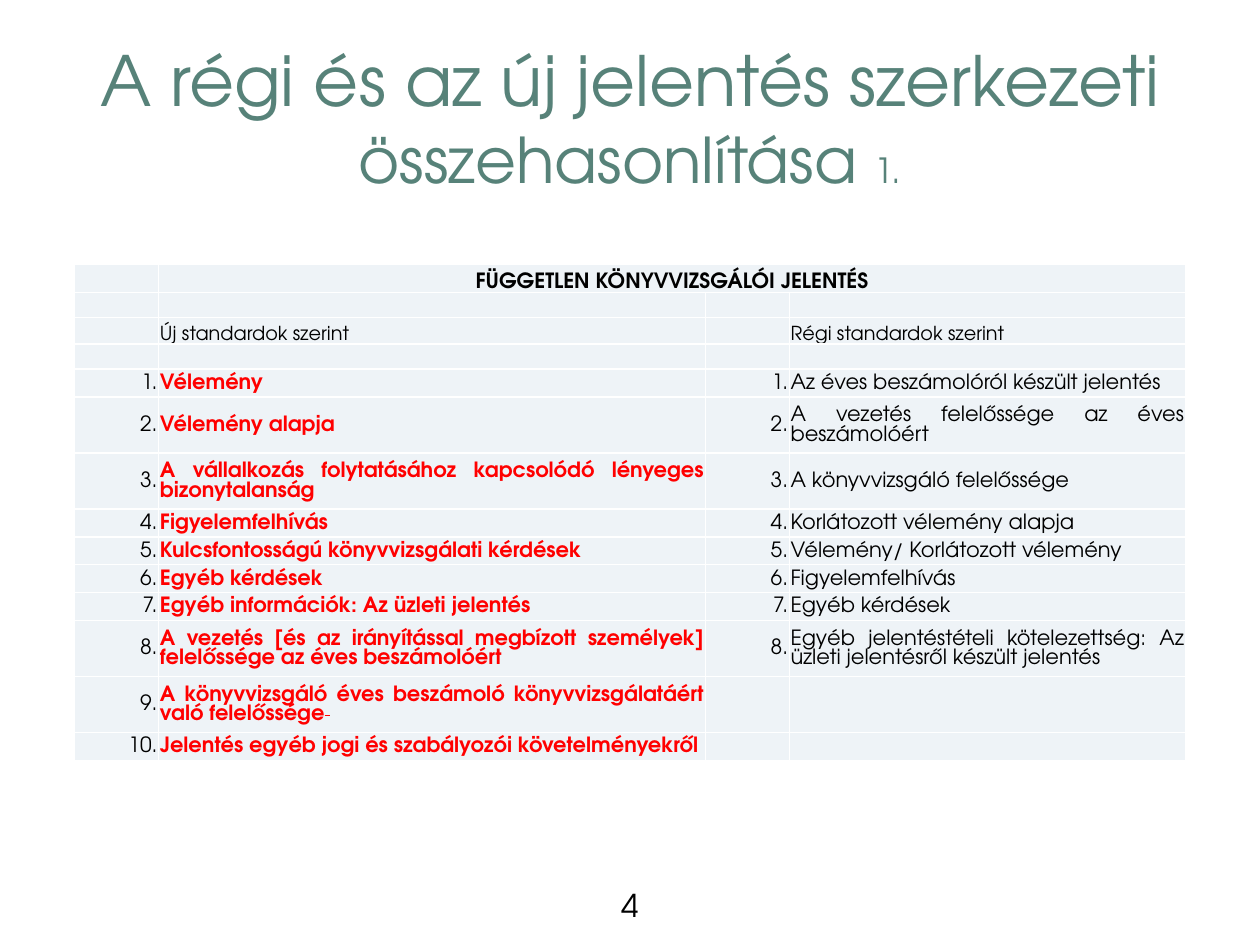
from lxml.etree import SubElement
from pptx import Presentation
from pptx.dml.color import RGBColor
from pptx.enum.text import MSO_ANCHOR, PP_ALIGN
from pptx.oxml.ns import qn
from pptx.util import Inches, Pt

FONT = "TeX Gyre Adventor"
GREEN, BLACK, RED, PALE, WHITE = "578279", "000000", "FF0000", "EEF3F7", "FFFFFF"
GRID_COLUMNS, GRID_ROWS = 100, 75

NEW_SECTIONS = [
    "Vélemény",
    "Vélemény alapja",
    "A vállalkozás folytatásához kapcsolódó lényeges bizonytalanság",
    "Figyelemfelhívás",
    "Kulcsfontosságú könyvvizsgálati kérdések",
    "Egyéb kérdések",
    "Egyéb információk: Az üzleti jelentés",
    "A vezetés [és az irányítással megbízott személyek] felelőssége az éves beszámolóért",
    "A könyvvizsgáló éves beszámoló könyvvizsgálatáért való felelőssége",
    "Jelentés egyéb jogi és szabályozói követelményekről",
]
OLD_SECTIONS = [
    "Az éves beszámolóról készült jelentés",
    "A vezetés felelőssége az éves beszámolóért",
    "A könyvvizsgáló felelőssége",
    "Korlátozott vélemény alapja",
    "Vélemény/ Korlátozott vélemény",
    "Figyelemfelhívás",
    "Egyéb kérdések",
    "Egyéb jelentéstételi kötelezettség: Az üzleti jelentésről készült jelentés",
]
TWO_LINE_SECTIONS = (2, 3, 8, 9)
LINE_ROWS = 2.22


def color(value):
    return RGBColor.from_string(value)


class SlideBuilder:
    """Holds the style and the current page; lengths are grid columns and rows."""

    def __init__(self, deck):
        self.page = deck.slides.add_slide(deck.slide_layouts[6])
        self.column = deck.slide_width / GRID_COLUMNS
        self.row = deck.slide_height / GRID_ROWS

    def place(self, left, top, width, height):
        return (round(left * self.column), round(top * self.row),
                round(width * self.column), round(height * self.row))

    def span(self, para, text, size, ink=BLACK, bold=False, underline=False):
        span = para.add_run()
        span.text = text
        span.font.name = FONT
        span.font.size = Pt(size)
        span.font.bold = bold
        span.font.underline = underline
        span.font.color.rgb = color(ink)
        return span

    def text(self, area, spans, ink, anchor):
        box = self.page.shapes.add_textbox(*self.place(*area))
        frame = box.text_frame
        frame.word_wrap = True
        frame.vertical_anchor = anchor
        para = frame.paragraphs[0]
        para.alignment = PP_ALIGN.CENTER
        for text, size in spans:
            self.span(para, text, size, ink)

    def table(self, left, top, widths, heights):
        area = self.place(left, top, sum(widths), sum(heights))
        table = self.page.shapes.add_table(len(heights), len(widths), *area).table
        for column, width in zip(table.columns, widths):
            column.width = round(width * self.column)
        for row, height in zip(table.rows, heights):
            row.height = round(height * self.row)
            for cell in row.cells:
                self.plain_cell(cell)
        return table

    def plain_cell(self, cell):
        cell.margin_left = cell.margin_right = cell.margin_top = Inches(0.01)
        cell.margin_bottom = 0
        # Borders come before the fill in the cell properties
        properties = cell._tc.get_or_add_tcPr()
        for side in ("a:lnL", "a:lnR", "a:lnT", "a:lnB"):
            line = SubElement(properties, qn(side), w=str(Pt(1)))
            solid = SubElement(line, qn("a:solidFill"))
            SubElement(solid, qn("a:srgbClr"), val=WHITE)
        cell.fill.solid()
        cell.fill.fore_color.rgb = color(PALE)
        # Small type keeps the empty rows low
        SubElement(cell.text_frame.paragraphs[0]._p, qn("a:endParaRPr"), sz="1000")

    def cell_text(self, cell, text, align, size=12, anchor=MSO_ANCHOR.MIDDLE, **style):
        cell.vertical_anchor = anchor
        para = cell.text_frame.paragraphs[0]
        para.alignment = align
        self.span(para, text, size, **style)
        return para


def main():
    deck = Presentation()
    deck.slide_width, deck.slide_height = Inches(10), Inches(7.5)
    builder = SlideBuilder(deck)

    # Title
    title = [("A régi és az új jelentés szerkezeti ", 39.6),
             ("összehasonlítása ", 36), ("1.", 19.8)]
    builder.text((5, 3, 90, 12.5), title, GREEN, MSO_ANCHOR.MIDDLE)

    # Comparison table
    heights = [2.2, 2, 2.1, 2]
    heights += [LINE_ROWS * (2 if number in TWO_LINE_SECTIONS else 1)
                for number in range(1, len(NEW_SECTIONS) + 1)]
    table = builder.table(5.92, 21, [6.68, 43.4, 6.65, 31.45], heights)

    # Table headings
    table.cell(0, 1).merge(table.cell(0, 3))
    builder.cell_text(table.cell(0, 1), "FÜGGETLEN KÖNYVVIZSGÁLÓI JELENTÉS",
                      PP_ALIGN.CENTER, anchor=MSO_ANCHOR.BOTTOM, bold=True)
    for column, heading in ((1, "Új standardok szerint"), (3, "Régi standardok szerint")):
        builder.cell_text(table.cell(2, column), heading, PP_ALIGN.LEFT, 11,
                          MSO_ANCHOR.BOTTOM, underline=True)

    # Numbered sections, new on the left and old on the right
    for column, sections, style in ((0, NEW_SECTIONS, {"ink": RED, "bold": True}),
                                    (2, OLD_SECTIONS, {})):
        for number, section in enumerate(sections, 1):
            row = number + 3
            builder.cell_text(table.cell(row, column), f"{number}.", PP_ALIGN.RIGHT)
            para = builder.cell_text(table.cell(row, column + 1), section,
                                     PP_ALIGN.JUSTIFY, **style)
            if column == 0 and number == 9:
                struck = builder.span(para, " ", 12, **style)
                struck.font._element.set("strike", "sngStrike")

    # Page number
    builder.text((2, 69.8, 96, 4), [("4", 18)], BLACK, MSO_ANCHOR.TOP)

    deck.save("out.pptx")


if __name__ == "__main__":
    main()
